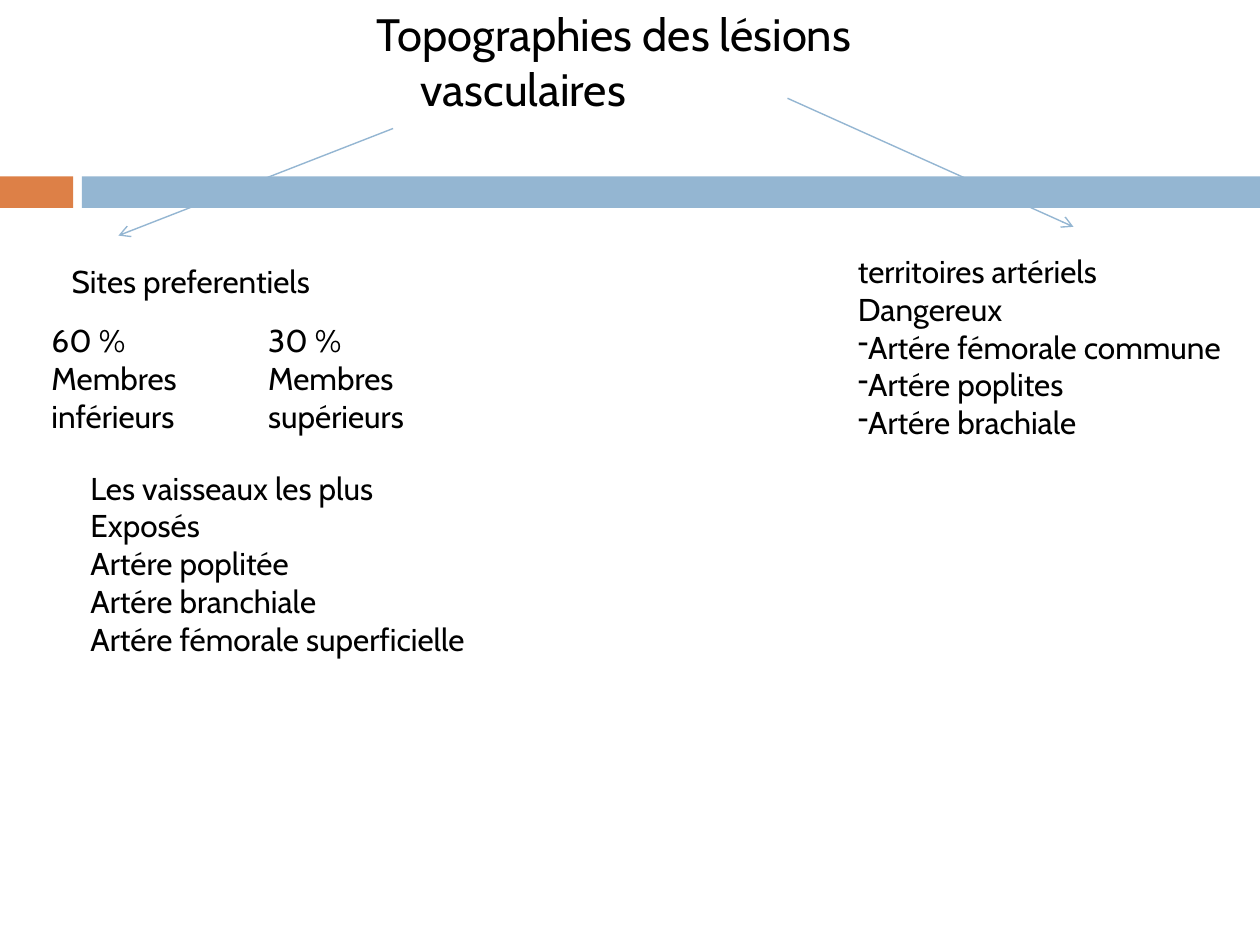
from dataclasses import dataclass

from lxml.etree import SubElement
from pptx import Presentation
from pptx.dml.color import RGBColor
from pptx.enum.shapes import MSO_CONNECTOR, MSO_SHAPE
from pptx.enum.text import MSO_ANCHOR, MSO_AUTO_SIZE, PP_ALIGN
from pptx.oxml.ns import qn
from pptx.slide import Slide
from pptx.util import Inches, Pt


def color(hex_text):
    return RGBColor.from_string(hex_text)


@dataclass
class Page:
    """Style of the deck and the slide being filled."""
    slide: Slide
    font: str = "Cabin"
    ink: str = "000000"
    blue: str = "94B6D2"
    orange: str = "DD8047"
    title_size: float = 25.9
    body_size: float = 18

    def add_span(self, para, text, size):
        span = para.add_run()
        span.text = text
        span.font.name = self.font
        span.font.size = Pt(size)
        span.font.color.rgb = color(self.ink)

    def title(self, text, left, top, width, height, hanging):
        box = self.slide.shapes.title
        box.left, box.top = Inches(left), Inches(top)
        box.width, box.height = Inches(width), Inches(height)
        frame = box.text_frame
        frame.word_wrap = True
        frame.auto_size = MSO_AUTO_SIZE.NONE
        frame.vertical_anchor = MSO_ANCHOR.TOP
        para = frame.paragraphs[0]
        para.alignment = PP_ALIGN.LEFT
        properties = para._p.get_or_add_pPr()
        properties.set("marL", str(Inches(hanging)))
        properties.set("indent", str(-Inches(hanging)))
        self.add_span(para, text, self.title_size)

    def bar(self, left, top, width, height, fill):
        shape = self.slide.shapes.add_shape(
            MSO_SHAPE.RECTANGLE, Inches(left), Inches(top), Inches(width), Inches(height))
        shape.shadow.inherit = False
        shape.fill.solid()
        shape.fill.fore_color.rgb = color(fill)
        shape.line.fill.background()

    def arrow(self, start, end):
        line = self.slide.shapes.add_connector(
            MSO_CONNECTOR.STRAIGHT, *map(Inches, start), *map(Inches, end))
        line.line.color.rgb = color(self.blue)
        line.line.width = Pt(0.79)
        properties = line._element.spPr
        SubElement(properties.get_or_add_ln(), qn("a:tailEnd"), type="arrow")
        SubElement(properties, qn("a:effectLst"))

    def text(self, lines, left, top, width, height, wrap=False, dashed=()):
        """Add one paragraph per line, then the dashed list items."""
        box = self.slide.shapes.add_textbox(
            Inches(left), Inches(top), Inches(width), Inches(height))
        frame = box.text_frame
        frame.word_wrap = wrap
        frame.auto_size = MSO_AUTO_SIZE.SHAPE_TO_FIT_TEXT
        for index, line in enumerate([*lines, *dashed]):
            para = frame.add_paragraph() if index else frame.paragraphs[0]
            if index >= len(lines):
                SubElement(para._p.get_or_add_pPr(), qn("a:buChar"), char="-")
            self.add_span(para, line, self.body_size)


def main():
    deck = Presentation()
    deck.slide_width, deck.slide_height = Inches(10), Inches(7.5)
    page = Page(deck.slides.add_slide(deck.slide_layouts[5]))

    page.bar(0, 1.4, 0.58, 0.25, page.orange)
    page.bar(0.65, 1.4, 9.35, 0.25, page.blue)
    page.title("Topographies des lésions vasculaires", 2.89, 0, 4.77, 0.86, hanging=0.35)

    page.arrow((3.12, 1.02), (0.94, 1.87))
    page.arrow((6.25, 0.78), (8.52, 1.8))

    page.text(["Sites preferentiels"], 0.47, 2.03, 2.22, 0.4)
    limbs = [(0.31, "60 %", "Membres inférieurs"), (2.03, "30 %", "Membres supérieurs")]
    for left, share, limb in limbs:
        page.text([share, limb], left, 2.5, 1.41, 1.01, wrap=True)
    page.text(["Les vaisseaux les plus", "Exposés", "Artére poplitée",
               "Artére branchiale", "Artére fémorale superficielle"],
              0.62, 3.67, 3.34, 1.62)
    page.text(["territoires artériels", "Dangereux"], 6.71, 1.95, 3.2, 1.62,
              dashed=["Artére fémorale commune", "Artére poplites", "Artére brachiale"])

    deck.save("out.pptx")


if __name__ == "__main__":
    main()
